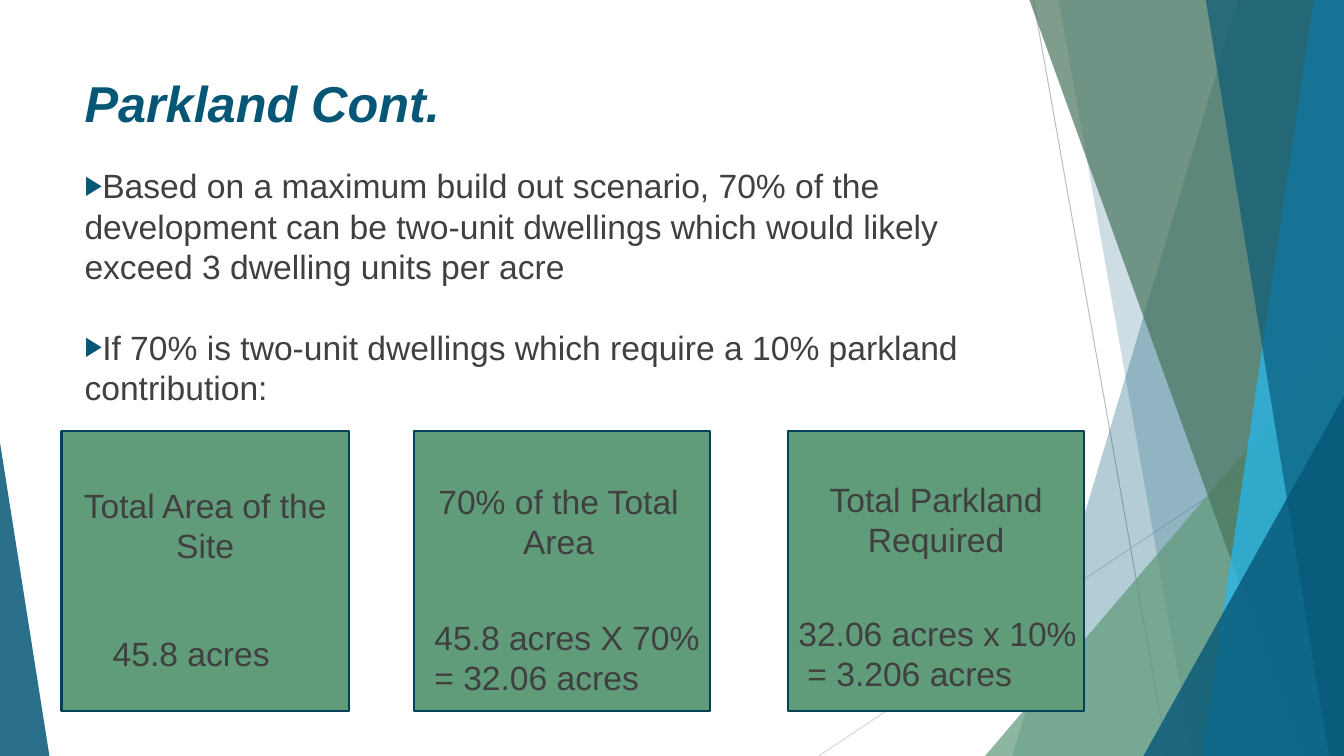
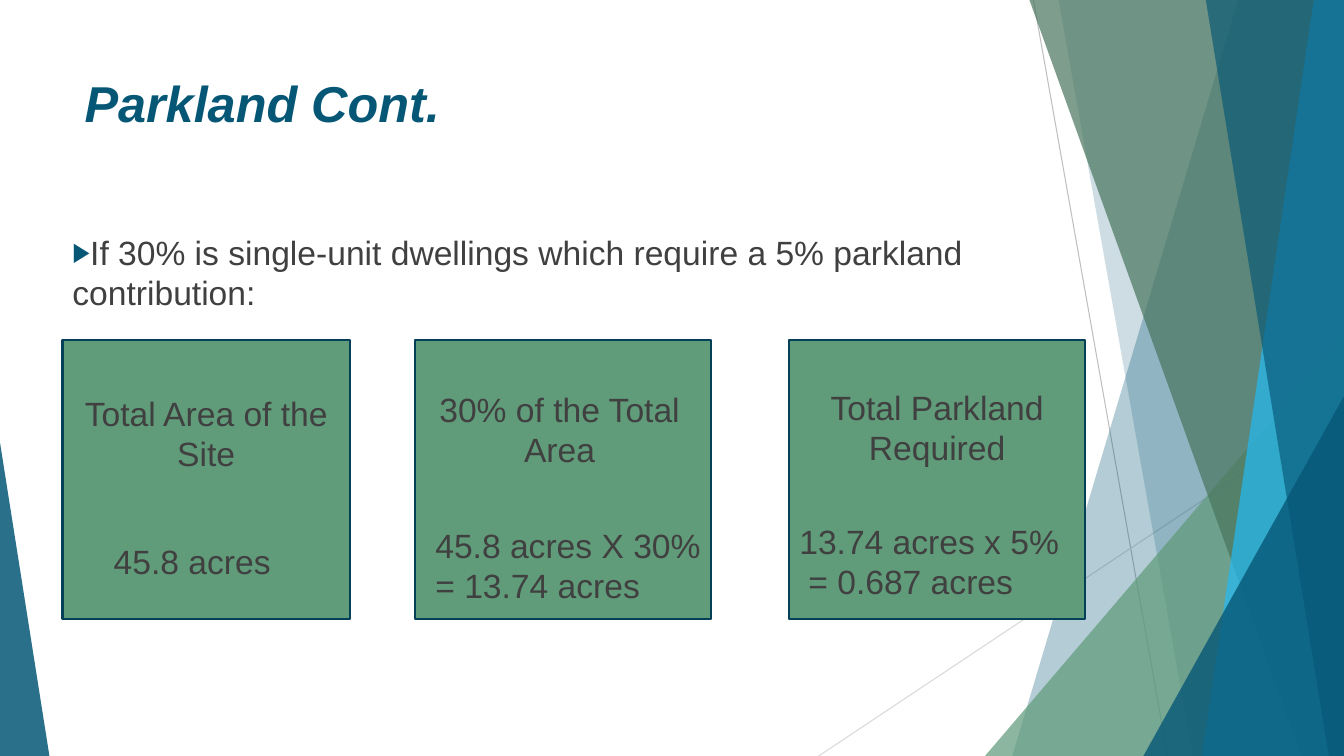
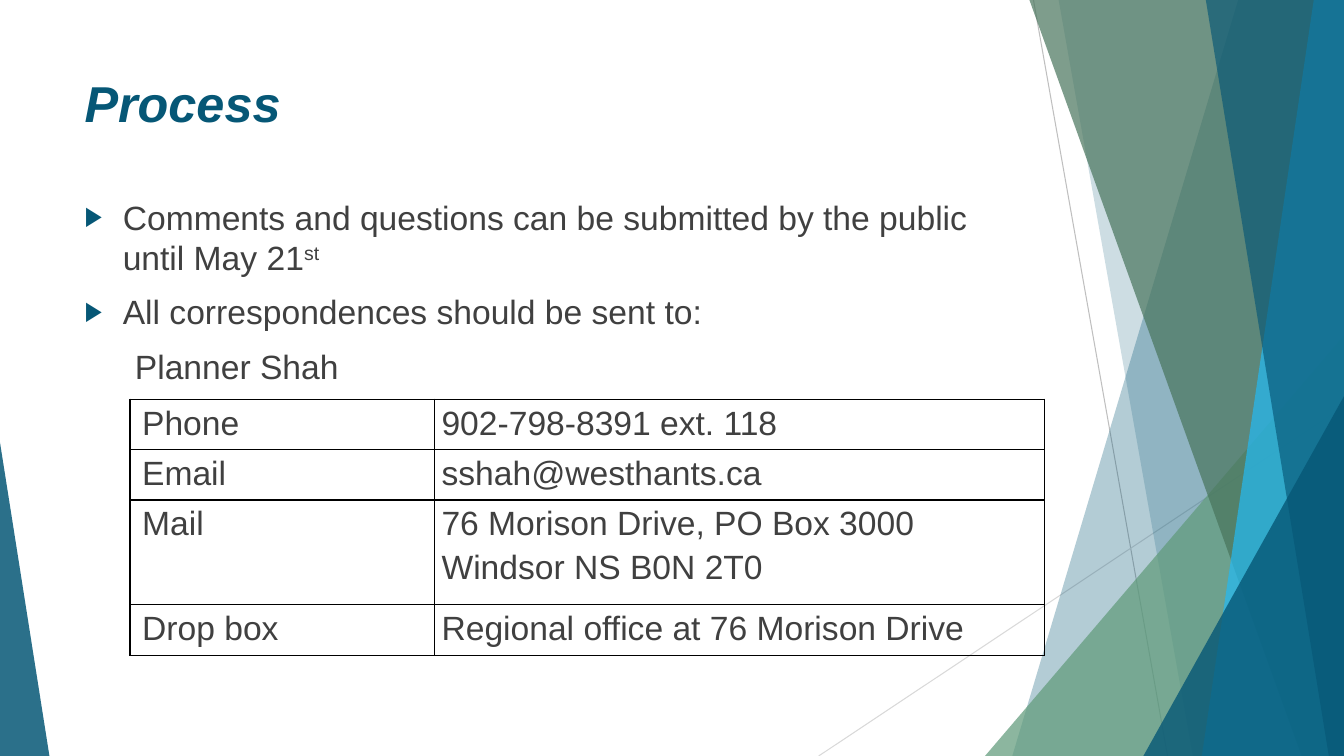
from dataclasses import dataclass

from pptx import Presentation
from pptx.dml.color import RGBColor
from pptx.enum.shapes import MSO_CONNECTOR as Connector, MSO_SHAPE as Shape
from pptx.enum.text import PP_ALIGN as Align
from pptx.oxml.ns import qn
from pptx.oxml.xmlchemy import OxmlElement
from pptx.util import Pt

PX = 9144
WIDTH, HEIGHT = 1333, 750
FONT = "Arial"
TEAL = RGBColor(0x06, 0x57, 0x76)
DARK_TEAL = RGBColor(0x04, 0x40, 0x57)
SKY = RGBColor(0x23, 0xBA, 0xF4)
GREEN = RGBColor(0x60, 0x9B, 0x7A)
DARK_GREEN = RGBColor(0x48, 0x74, 0x5C)
INK = RGBColor(0x40, 0x40, 0x40)
GREY = RGBColor(0xBF, 0xBF, 0xBF)
LIGHT_GREY = RGBColor(0xD9, 0xD9, 0xD9)
BLACK = RGBColor(0, 0, 0)


@dataclass
class Line:
    """One paragraph and its layout."""

    text: str
    margin: int = 0
    hanging: int = 0
    before: float = 0
    bullet: bool = False
    raised: str = ""


def px(*lengths):
    """Turn px lengths into EMU."""
    return [length * PX for length in lengths]


def add_child(parent, tag, **attributes):
    """Append an XML element with the given attributes."""
    child = OxmlElement(tag)
    for name, value in attributes.items():
        child.set(name, str(value))
    parent.append(child)
    return child


def add_bullet(para):
    """Give a paragraph the teal arrow bullet."""
    props = para._p.get_or_add_pPr()
    add_child(add_child(props, "a:buClr"), "a:srgbClr", val=TEAL)
    add_child(props, "a:buSzPct", val=80000)
    add_child(props, "a:buFont", typeface=FONT)
    add_child(props, "a:buChar", char="▶")


def style_font(font, size, color, strong=False):
    """Set the deck's font on a paragraph."""
    font.name, font.size = FONT, Pt(size)
    font.color.rgb = color
    if strong:
        font.bold = font.italic = True


def write(frame, lines, size=24, color=INK, strong=False, align=Align.LEFT, spacing=None):
    """Fill a text frame with lines."""
    frame.word_wrap = True
    for number, line in enumerate(lines):
        para = frame.add_paragraph() if number else frame.paragraphs[0]
        para.add_run().text = line.text
        if line.raised:
            span = para.add_run()
            span.text = line.raised
            span._r.get_or_add_rPr().set("baseline", "30000")
        props = para._p.get_or_add_pPr()
        props.set("marL", str(line.margin * PX))
        props.set("indent", str(-line.hanging * PX))
        if line.bullet:
            add_bullet(para)
        para.alignment = align
        if line.before:
            para.space_before = Pt(line.before)
        if spacing:
            para.line_spacing = spacing
        style_font(para.font, size, color, strong)


def add_text(page, left, top, width, height, lines, **style):
    """Add a text box."""
    box = page.shapes.add_textbox(*px(left, top, width, height))
    write(box.text_frame, lines, **style)


def fill_clear(shape, color, opacity):
    """Give a shape a see-through fill and no outline."""
    shape.shadow.inherit = False
    shape.line.fill.background()
    shape.fill.solid()
    shape.fill.fore_color.rgb = color
    solid = shape.element.spPr.find(qn("a:solidFill"))
    add_child(solid[0], "a:alpha", val=opacity * 1000)


def add_band(page, top_x, bottom_x, color, opacity):
    """Add a slanted band that reaches the right edge."""
    outline = page.shapes.build_freeform(top_x, 0, scale=float(PX))
    outline.add_line_segments([(WIDTH, 0), (WIDTH, HEIGHT), (bottom_x, HEIGHT)], close=True)
    fill_clear(outline.convert_to_shape(), color, opacity)


def add_corner(page, left, top, width, apex, color, opacity):
    """Add a right triangle that stands on the bottom edge."""
    corner = page.shapes.add_shape(Shape.ISOSCELES_TRIANGLE, *px(left, top, width, HEIGHT - top))
    corner.adjustments[0] = apex
    fill_clear(corner, color, opacity)


def add_hairline(page, start, end, color):
    """Add a thin line."""
    line = page.shapes.add_connector(Connector.STRAIGHT, *px(*start, *end))
    line.line.color.rgb, line.line.width = color, Pt(0.75)
    add_child(line.element.spPr, "a:effectLst")


def add_page(deck, title):
    """Add a slide with the shared backdrop and title."""
    page = deck.slides.add_slide(deck.slide_layouts[6])
    add_hairline(page, (1025, 0), (1158, HEIGHT), GREY)
    add_hairline(page, (WIDTH, 403), (812, HEIGHT), LIGHT_GREY)
    add_band(page, 1228, 1004, TEAL, 30)
    add_band(page, 1050, 1183, TEAL, 20)
    add_corner(page, 977, 333, 356, 1, GREEN, 72)
    add_band(page, 1021, 1291, DARK_GREEN, 70)
    add_band(page, 1303, 1192, SKY, 70)
    add_band(page, 1196, 1318, TEAL, 65)
    add_corner(page, 1134, 393, 199, 1, TEAL, 80)
    add_corner(page, 0, 439, 49, 0, TEAL, 85)
    add_text(page, 74, 67, 940, 144, [Line(title)], size=36, color=TEAL, strong=True)
    return page


def add_panel(page, left, top, width):
    """Add a green panel."""
    panel = page.shapes.add_shape(Shape.RECTANGLE, *px(left, top, width, 277))
    panel.shadow.inherit = False
    panel.fill.solid()
    panel.fill.fore_color.rgb = GREEN
    panel.line.color.rgb, panel.line.width = DARK_TEAL, Pt(1.5)


def add_calculation(page, left, top, share, area, required):
    """Add the three panels that work out the parkland."""
    for x, width in [(0, 285), (350, 293), (721, 293)]:
        add_panel(page, left + x, top, width)
    labels = [
        (-5, 48, 295, "Total Area of the Site"),
        (356, 44, 274, f"{share} of the Total Area"),
        (721, 42, 293, "Total Parkland Required"),
    ]
    for x, y, width, label in labels:
        add_text(page, left + x, top + y, width, 91, [Line(label)], align=Align.CENTER)
    values = [
        (41, 195, 213, [Line("45.8 acres")]),
        (360, 179, 303, [Line(f"45.8 acres X {share}"), Line(f"= {area} acres")]),
        (721, 175, 303, [Line(f"{area} acres x {required[0]}"),
                         Line(f"= {required[1]} acres", margin=9)]),
    ]
    for x, y, width, lines in values:
        add_text(page, left + x, top + y, width, 45 * len(lines), lines)


def add_border(cell):
    """Draw a thin black border round a cell."""
    props = cell._tc.get_or_add_tcPr()
    for number, side in enumerate(("a:lnL", "a:lnR", "a:lnT", "a:lnB")):
        edge = OxmlElement(side)
        edge.set("w", str(Pt(1)))
        add_child(add_child(edge, "a:solidFill"), "a:srgbClr", val=BLACK)
        props.insert(number, edge)


def add_contacts(page, left, top, columns, rows):
    """Add the contact table from (height, name, detail lines) rows."""
    height = sum(row[0] for row in rows)
    frame = page.shapes.add_table(len(rows), len(columns), *px(left, top, sum(columns), height))
    table = frame.table
    table.first_row = table.horz_banding = False
    for column, width in zip(table.columns, columns):
        column.width = width * PX
    for row, (row_height, name, details) in zip(table.rows, rows):
        row.height = row_height * PX
        for cell, texts, inset in zip(row.cells, ([name], details), (12, 7)):
            cell.margin_left, cell.margin_right = px(inset, 7)
            cell.margin_top = cell.margin_bottom = 0
            cell.fill.background()
            add_border(cell)
            write(cell.text_frame, [Line(text) for text in texts], spacing=1.15)


def build_two_unit(deck):
    """Build the slide on two-unit dwellings."""
    page = add_page(deck, "Parkland Cont.")
    add_text(page, 74, 159, 940, 226, [
        Line("Based on a maximum build out scenario, 70% of the development can be "
             "two-unit dwellings which would likely exceed 3 dwelling units per acre",
             hanging=38, bullet=True),
        Line("If 70% is two-unit dwellings which require a 10% parkland contribution:",
             hanging=38, bullet=True, before=28.8),
    ])
    add_calculation(page, 61, 428, "70%", "32.06", ("10%", "3.206"))


def build_single_unit(deck):
    """Build the slide on single-unit dwellings."""
    page = add_page(deck, "Parkland Cont.")
    add_text(page, 62, 225, 940, 91, [
        Line("If 30% is single-unit dwellings which require a 5% parkland contribution:",
             hanging=38, bullet=True),
    ])
    add_calculation(page, 62, 337, "30%", "13.74", ("5%", "0.687"))


def build_process(deck):
    """Build the slide on the process and contacts."""
    page = add_page(deck, "Process")
    add_text(page, 74, 190, 940, 200, [
        Line("Comments and questions can be submitted by the public until May 21",
             margin=38, hanging=38, bullet=True, raised="st"),
        Line("All correspondences should be sent to:",
             margin=38, hanging=38, bullet=True, before=10),
        Line("Planner Shah", margin=50, before=10),
    ])
    add_contacts(page, 129, 396, (302, 605), [
        (50, "Phone", ["902-798-8391 ext. 118"]),
        (50, "Email", ["sshah@westhants.ca"]),
        (104, "Mail", ["76 Morison Drive, PO Box 3000", "Windsor NS B0N 2T0"]),
        (50, "Drop box", ["Regional office at 76 Morison Drive"]),
    ])


def main():
    """Build and save the deck."""
    deck = Presentation()
    deck.slide_width, deck.slide_height = px(WIDTH, HEIGHT)
    build_two_unit(deck)
    build_single_unit(deck)
    build_process(deck)
    deck.save("out.pptx")


if __name__ == "__main__":
    main()
